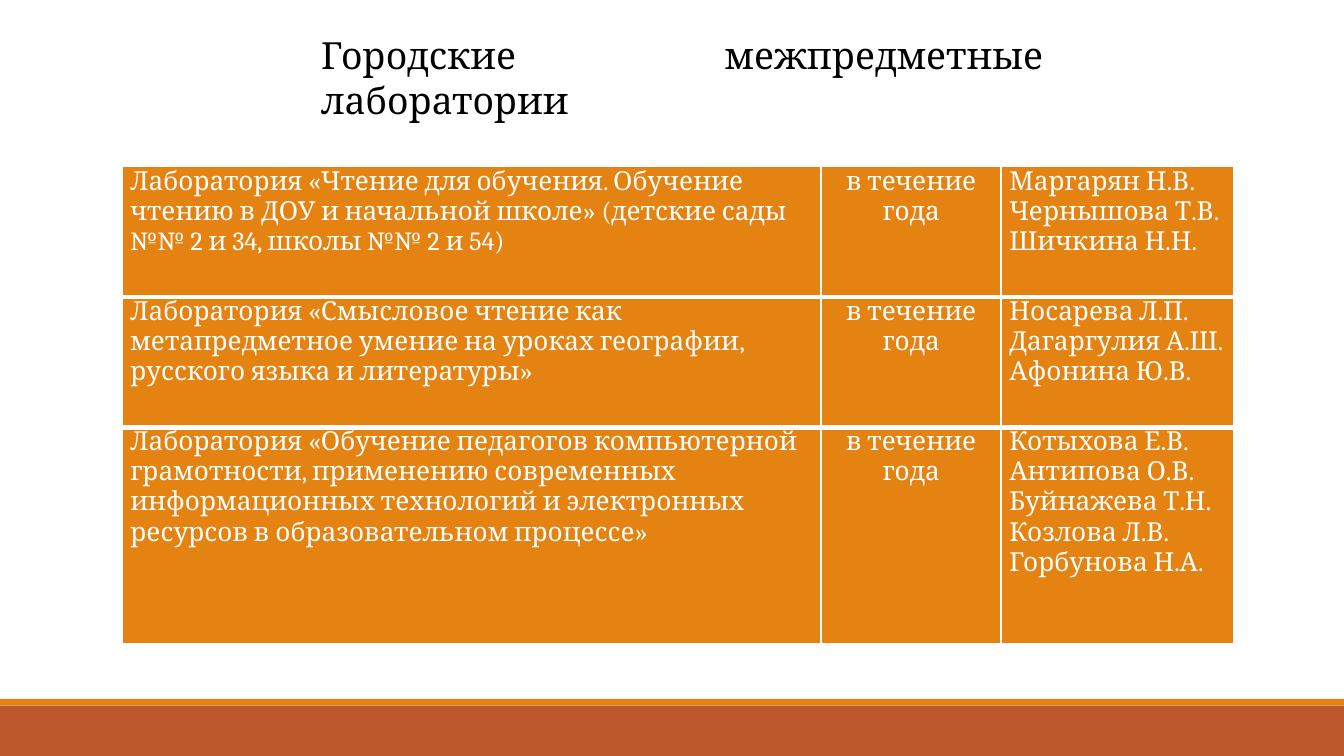
from dataclasses import dataclass

from lxml.etree import SubElement
from pptx import Presentation
from pptx.dml.color import RGBColor
from pptx.enum.shapes import MSO_SHAPE as Shape
from pptx.enum.text import MSO_ANCHOR as Anchor, PP_ALIGN as Align
from pptx.oxml.ns import qn
from pptx.util import Inches, Pt


@dataclass(frozen=True)
class Theme:
    font: str = "Cambria"
    title_size: int = 20
    table_size: int = 14
    orange: str = "E48312"
    rust: str = "BD582C"
    white: str = "FFFFFF"
    black: str = "000000"
    thin: int = 1
    thick: int = 3


theme = Theme()
WIDTH = 10
HEIGHT = WIDTH * 9 / 16


def write(paragraph, text, size, color, alignment):
    paragraph.alignment = alignment
    run = paragraph.add_run()
    run.text = text
    run.font.name = theme.font
    run.font.size = Pt(size)
    run.font.color.rgb = RGBColor.from_string(color)


def add_border(cell, side, points):
    line = SubElement(cell._tc.get_or_add_tcPr(), qn(f"a:{side}"), w=str(Pt(points)))
    fill = SubElement(line, qn("a:solidFill"))
    SubElement(fill, qn("a:srgbClr"), val=theme.white)


presentation = Presentation()
presentation.slide_width = Inches(WIDTH)
presentation.slide_height = Inches(HEIGHT)
slide = presentation.slides.add_slide(presentation.slide_layouts[6])

# Footer bands
for top, height, color in [(5.25, HEIGHT - 5.25, theme.rust), (5.2, 0.05, theme.orange)]:
    band = slide.shapes.add_shape(
        Shape.RECTANGLE, 0, Inches(top), Inches(WIDTH), Inches(height))
    band.shadow.inherit = False
    band.fill.solid()
    band.fill.fore_color.rgb = RGBColor.from_string(color)
    band.line.fill.background()

# Laboratory table
laboratories = [
    ("Лаборатория «Чтение для обучения. Обучение чтению в ДОУ и начальной школе» "
     "(детские сады №№ 2 и 34, школы №№ 2 и 54)",
     ["Маргарян Н.В.", "Чернышова Т.В.", "Шичкина Н.Н."]),
    ("Лаборатория «Смысловое чтение как метапредметное умение на уроках географии, "
     "русского языка и литературы»",
     ["Носарева Л.П.", "Дагаргулия А.Ш.", "Афонина Ю.В."]),
    ("Лаборатория «Обучение педагогов компьютерной грамотности, применению современных "
     "информационных технологий и электронных ресурсов в образовательном процессе»",
     ["Котыхова Е.В.", "Антипова О.В.", "Буйнажева Т.Н.", "Козлова Л.В.",
      "Горбунова Н.А."]),
]
period = "в течение года"
column_widths = [5.2, 1.34, 1.73]
row_heights = [0.97, 0.97, 1.61]
alignments = [Align.LEFT, Align.CENTER, Align.JUSTIFY]

table = slide.shapes.add_table(
    len(row_heights), len(column_widths), Inches(0.91), Inches(1.24),
    Inches(sum(column_widths)), Inches(sum(row_heights))).table
for column, width in zip(table.columns, column_widths):
    column.width = Inches(width)
for row, height in zip(table.rows, row_heights):
    row.height = Inches(height)

last_row = len(laboratories) - 1
for row_index, (laboratory, leaders) in enumerate(laboratories):
    contents = [[laboratory], [period], leaders]
    for column_index, (lines, alignment) in enumerate(zip(contents, alignments)):
        cell = table.cell(row_index, column_index)
        cell.margin_left = cell.margin_right = Inches(0.06)
        cell.margin_top = cell.margin_bottom = 0
        # Borders come before the fill; rows are parted by thick lines
        add_border(cell, "lnL", theme.thin)
        add_border(cell, "lnR", theme.thin)
        add_border(cell, "lnT", theme.thick if row_index > 0 else theme.thin)
        add_border(cell, "lnB", theme.thick if row_index < last_row else theme.thin)
        cell.fill.solid()
        cell.fill.fore_color.rgb = RGBColor.from_string(theme.orange)
        frame = cell.text_frame
        for index, line in enumerate(lines):
            paragraph = frame.add_paragraph() if index else frame.paragraphs[0]
            write(paragraph, line, theme.table_size, theme.white, alignment)

# Title
title = slide.shapes.add_textbox(Inches(2.32), Inches(0.37), Inches(5.51), Inches(0.41))
frame = title.text_frame
frame.word_wrap = True
frame.vertical_anchor = Anchor.MIDDLE
frame.margin_left = frame.margin_right = Inches(0.07)
frame.margin_top = frame.margin_bottom = Inches(0.04)
write(frame.paragraphs[0], "Городские межпредметные лаборатории",
      theme.title_size, theme.black, Align.JUSTIFY)

presentation.save("out.pptx")
